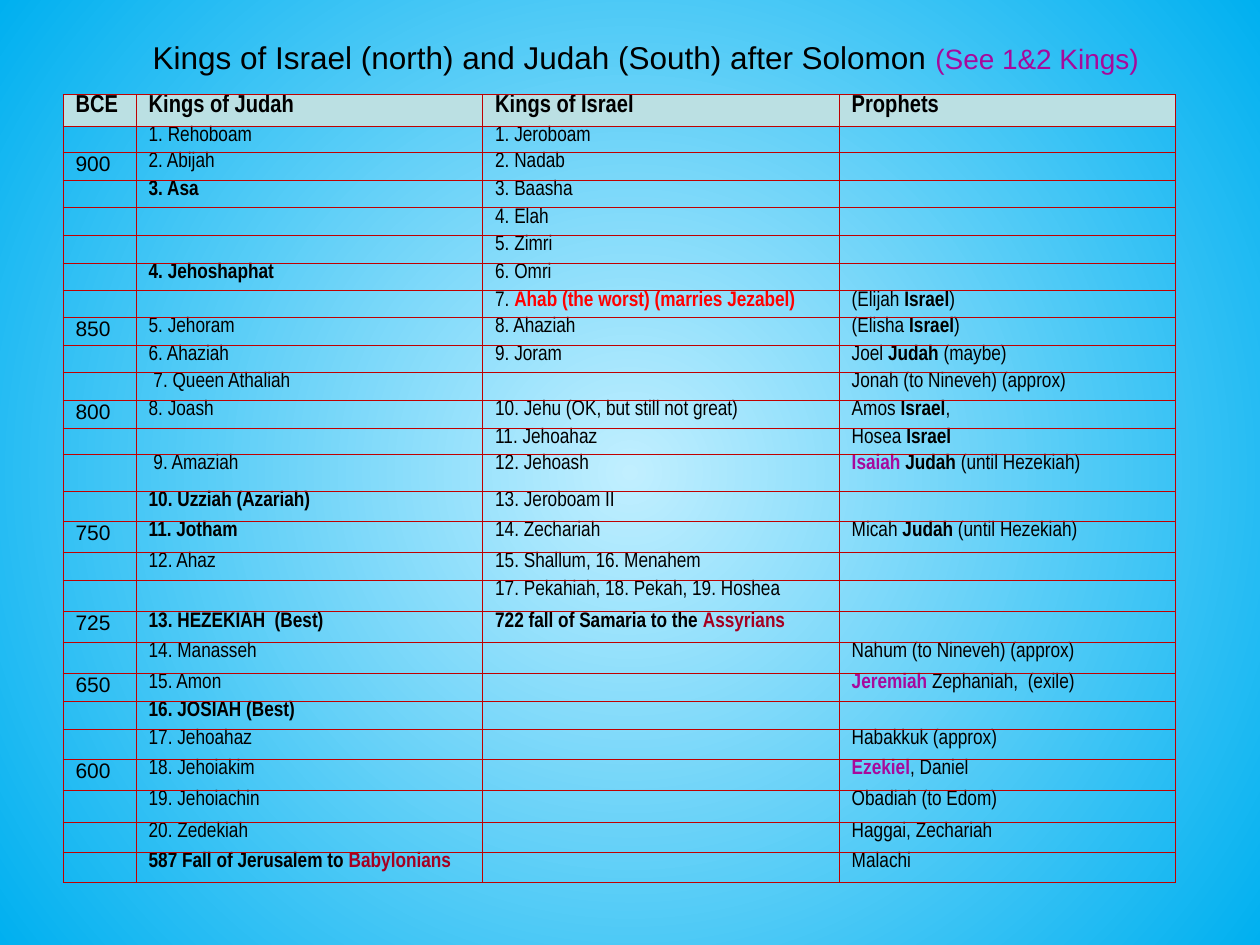
from lxml import etree
from pptx import Presentation
from pptx.dml.color import RGBColor
from pptx.enum.text import MSO_ANCHOR, PP_ALIGN
from pptx.oxml.ns import qn
from pptx.util import Inches, Pt

CENTER = PP_ALIGN.CENTER
MIDDLE, TOP = MSO_ANCHOR.MIDDLE, MSO_ANCHOR.TOP
BLACK, PURPLE, RULE = "000000", "A7099C", "C00000"
MARKS = {"*": BLACK, "!": "FF0000", "^": PURPLE, "~": "A50021"}
COLS = [0.58, 2.75, 2.83, 2.67]
HEAD = ["BCE", "Kings of Judah", "Kings of Israel", "Prophets"]
ROWS = [
    (0.21, "", "1. Rehoboam", "1. Jeroboam", ""),
    (0.22, "900", "2. Abijah", "2. Nadab", ""),
    (0.22, "", "*3. Asa", "3. Baasha", ""),
    (0.22, "", "", "4. Elah", ""),
    (0.22, "", "", "5. Zimri", ""),
    (0.22, "", "*4. Jehoshaphat", "6. Omri", ""),
    (0.21, "", "", "7. |!Ahab (the worst) (marries Jezabel)", "(Elijah |*Israel|)"),
    (0.22, "850", "5. Jehoram", "8. Ahaziah", "(Elisha |*Israel|)"),
    (0.22, "", "6. Ahaziah", "9. Joram", "Joel |*Judah| (maybe)"),
    (0.22, "", "* |7. Queen Athaliah", "", "Jonah (to Nineveh) (approx)"),
    (0.22, "800", "8. Joash", "10. Jehu (OK, but still not great)", "Amos |*Israel|,"),
    (0.21, "", "", "11. Jehoahaz", "Hosea |*Israel"),
    (0.29, "", " 9. Amaziah", "12. Jehoash", "^Isaiah |*Judah| (until Hezekiah)"),
    (0.24, "", "*10. Uzziah (Azariah)", "13. Jeroboam II", ""),
    (0.25, "750", "*11. Jotham", "14. Zechariah", "Micah |*Judah| (until Hezekiah)"),
    (0.22, "", "12. Ahaz", "15. Shallum, 16. Menahem", ""),
    (0.25, "", "", "17. Pekahiah, 18. Pekah, 19. Hoshea", ""),
    (0.24, "725", "*13. HEZEKIAH  (Best)", "*722 fall of Samaria to the |~Assyrians", ""),
    (0.25, "", "14. Manasseh", "", "Nahum (to Nineveh) (approx)"),
    (0.22, "650", "15. Amon", "", "^Jeremiah |Zephaniah,  (exile)"),
    (0.22, "", "*16. JOSIAH (Best)", "", ""),
    (0.24, "", "17. Jehoahaz", "", "Habakkuk (approx)"),
    (0.25, "600", "18. Jehoiakim", "", "^Ezekiel|, Daniel"),
    (0.25, "", "19. Jehoiachin", "", "Obadiah (to Edom)"),
    (0.24, "", "20. Zedekiah", "", "Haggai, Zechariah"),
    (0.24, "", "*587 Fall of Jerusalem to |~Babylonians", "", "Malachi"),
]


def paint(target, color):
    """Set a colour object from a hex string."""
    target.rgb = RGBColor.from_string(color)


def write(par, text, size=12, font="Arial Narrow", color=BLACK, bold=False):
    """Append one formatted run to a paragraph."""
    run = par.add_run()
    run.text = text
    run.font.size, run.font.name, run.font.bold = Pt(size), font, bold
    paint(run.font.color, color)


def edge(cell):
    """Draw thin rules on all four sides of a cell."""
    props = cell._tc.get_or_add_tcPr()
    for spot, side in enumerate(("lnL", "lnR", "lnT", "lnB")):
        line = etree.Element(qn(f"a:{side}"), w=str(Pt(0.5)))
        fill = etree.SubElement(line, qn("a:solidFill"))
        etree.SubElement(fill, qn("a:srgbClr"), val=RULE)
        props.insert(spot, line)


def set_cell(cell, text, fill=None, indent=True, **style):
    """Fill, rule and write one cell of marked text."""
    cell.margin_left = cell.margin_right = Inches(0.1)
    cell.margin_top = cell.margin_bottom = 0
    cell.vertical_anchor = TOP
    if fill:
        cell.fill.solid()
        paint(cell.fill.fore_color, fill)
    else:
        cell.fill.background()
    edge(cell)
    par = cell.text_frame.paragraphs[0]
    if indent:
        props = par._p.get_or_add_pPr()
        props.set("marL", str(Inches(0.38)))
        props.set("indent", str(-Inches(0.38)))
    if not text:
        etree.SubElement(par._p, qn("a:endParaRPr"), sz="1200")
        return
    for part in text.split("|"):
        mark = part[0]
        if mark in MARKS:
            write(par, part[1:], **{**style, "bold": True, "color": MARKS[mark]})
        else:
            write(par, part, **style)


def add_kings(slide):
    """Add the table of kings and prophets."""
    frame = slide.shapes.add_table(len(ROWS) + 1, len(COLS), Inches(0.5),
                                   Inches(0.75), Inches(sum(COLS)), Inches(6.25))
    table = frame.table
    table.first_row = table.horz_banding = False
    for col, width in zip(table.columns, COLS):
        col.width = Inches(width)
    table.rows[0].height = Inches(0.25)
    for c, text in enumerate(HEAD):
        set_cell(table.cell(0, c), text, fill="BBE0E3", indent=c > 0, size=14, bold=True)
    for r, (high, *texts) in enumerate(ROWS, 1):
        table.rows[r].height = Inches(high)
        for c, text in enumerate(texts):
            font = "Arial Narrow" if c else "Arial"
            set_cell(table.cell(r, c), text, indent=c > 0, font=font)


def add_title(slide):
    """Place and write the title."""
    title = slide.shapes.title
    title.left, title.top = Inches(0.5), Inches(0.25)
    title.width, title.height = Inches(9.25), Inches(0.4)
    frame = title.text_frame
    frame.word_wrap = True
    frame.vertical_anchor = MIDDLE
    par = frame.paragraphs[0]
    par.alignment = CENTER
    write(par, "Kings of Israel (north) and Judah (South) after Solomon ", size=18, font="Arial")
    write(par, "(See 1&2 Kings)", size=16, font="Arial", color=PURPLE)


def set_back(slide):
    """Give the slide a round gradient from the centre."""
    fill = slide.background.fill
    fill.gradient()
    for stop, color in zip(fill.gradient_stops, ("C1EFFF", "00B0F0")):
        paint(stop.color, color)
    grad = slide._element.find(f".//{qn('a:gradFill')}")
    grad.remove(grad.find(qn("a:lin")))
    shade = etree.SubElement(grad, qn("a:path"), path="circle")
    etree.SubElement(shade, qn("a:fillToRect"), {side: "50000" for side in "ltrb"})


def main():
    """Build and save the slide."""
    prs = Presentation()
    prs.slide_width, prs.slide_height = Inches(10), Inches(7.5)
    slide = prs.slides.add_slide(prs.slide_layouts[5])
    set_back(slide)
    add_title(slide)
    add_kings(slide)
    prs.save("out.pptx")


if __name__ == "__main__":
    main()
